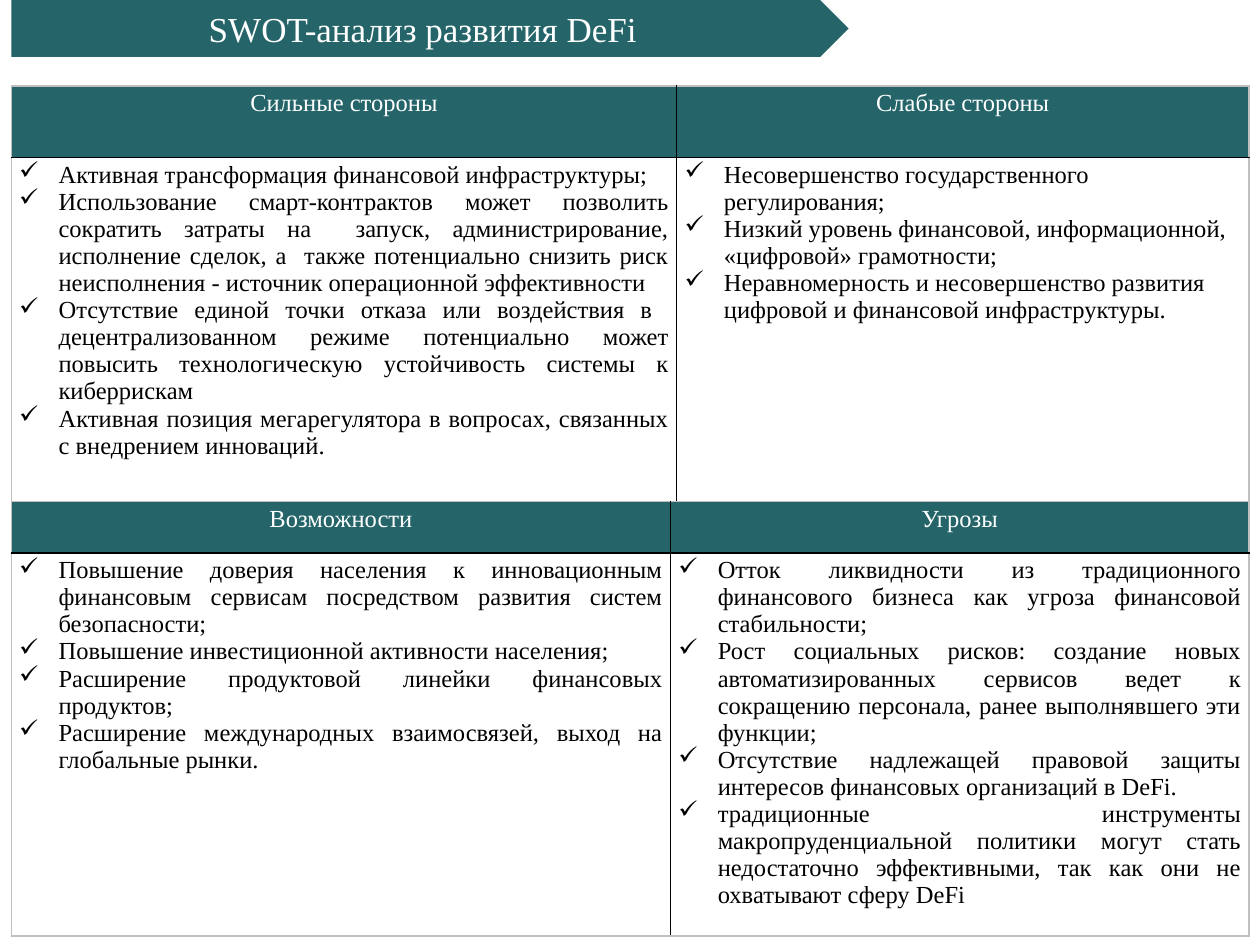
from lxml import etree
from pptx import Presentation
from pptx.dml.color import RGBColor
from pptx.enum.shapes import MSO_SHAPE
from pptx.enum.text import MSO_ANCHOR, PP_ALIGN
from pptx.oxml.ns import qn
from pptx.util import Pt

PENTAGON = MSO_SHAPE.PENTAGON
MIDDLE = MSO_ANCHOR.MIDDLE
LEFT, CENTER, JUSTIFY = PP_ALIGN.LEFT, PP_ALIGN.CENTER, PP_ALIGN.JUSTIFY

COLORS = {"teal": "256569", "white": "FFFFFF", "black": "000000", "edge": "BFBFBF"}
FONT = "Times New Roman"
MARGIN_LEFT = 6.5
INDENT = 22.5
CELL_MARGINS = {
    "margin_left": Pt(4.5), "margin_right": Pt(4.5),
    "margin_top": Pt(2.25), "margin_bottom": Pt(2.25),
}

STRENGTHS = [
    "Активная трансформация финансовой инфраструктуры;",
    "Использование смарт-контрактов может позволить сократить затраты на  запуск, "
    "администрирование, исполнение сделок, а  также потенциально снизить риск "
    "неисполнения - источник операционной эффективности",
    "Отсутствие единой точки отказа или воздействия в  децентрализованном режиме "
    "потенциально может повысить технологическую устойчивость системы к киберрискам",
    "Активная позиция мегарегулятора в вопросах, связанных с внедрением инноваций.",
]
WEAKNESSES = [
    "Несовершенство государственного регулирования;",
    "Низкий уровень финансовой, информационной, «цифровой» грамотности;",
    "Неравномерность и несовершенство развития цифровой и финансовой инфраструктуры.",
]
OPPORTUNITIES = [
    "Повышение доверия населения к инновационным финансовым сервисам посредством "
    "развития систем безопасности;",
    "Повышение инвестиционной активности населения;",
    "Расширение продуктовой линейки финансовых продуктов;",
    "Расширение международных взаимосвязей, выход на глобальные рынки.",
]
THREATS = [
    "Отток ликвидности из традиционного финансового бизнеса как угроза финансовой "
    "стабильности;",
    "Рост социальных рисков: создание новых автоматизированных сервисов ведет к "
    "сокращению персонала, ранее выполнявшего эти функции;",
    "Отсутствие надлежащей правовой защиты интересов финансовых организаций в DeFi.",
    "традиционные инструменты макропруденциальной политики могут стать недостаточно "
    "эффективными, так как они не охватывают сферу DeFi",
]


def rgb(name):
    return RGBColor.from_string(COLORS[name])


def write(p, text, size, color, align):
    p.alignment = align
    r = p.add_run()
    r.text = text
    for name, value in {"name": FONT, "size": Pt(size)}.items():
        setattr(r.font, name, value)
    r.font.color.rgb = rgb(color)


def add_check_mark(p):
    """Give the paragraph a hanging indent and a check mark bullet."""
    pPr = p._p.get_or_add_pPr()
    pPr.set("marL", str(Pt(INDENT)))
    pPr.set("indent", str(-Pt(INDENT)))
    etree.SubElement(pPr, qn("a:buChar")).set("char", "✓")


def set_borders(cell, row, col):
    """Draw black lines inside the two-by-two table and grey ones around it."""
    outer = {"L": col == 0, "R": col == 1, "T": row == 0, "B": row == 1}
    tcPr = cell._tc.get_or_add_tcPr()
    for i, (side, is_outer) in enumerate(outer.items()):
        ln = etree.Element(qn(f"a:ln{side}"), w=str(Pt(1)))
        fill = etree.SubElement(ln, qn("a:solidFill"))
        color = COLORS["edge" if is_outer else "black"]
        etree.SubElement(fill, qn("a:srgbClr")).set("val", color)
        tcPr.insert(i, ln)


def fill_header(cell, text):
    cell.fill.solid()
    cell.fill.fore_color.rgb = rgb("teal")
    write(cell.text_frame.paragraphs[0], text, 14, "white", CENTER)


def fill_list(cell, items, align):
    cell.fill.background()
    tf = cell.text_frame
    for i, item in enumerate(items):
        p = tf.add_paragraph() if i else tf.paragraphs[0]
        write(p, item, 14, "black", align)
        add_check_mark(p)


def add_swot_table(s, top, widths, heights, columns):
    """Add a header row over a row of lists; columns hold (title, items, align)."""
    table = s.shapes.add_table(
        2, 2, Pt(MARGIN_LEFT), Pt(top), Pt(sum(widths)), Pt(sum(heights))).table
    table.first_row = table.horz_banding = False
    for row, height in zip(table.rows, heights):
        row.height = Pt(height)
    for col, (title, items, align) in enumerate(columns):
        table.columns[col].width = Pt(widths[col])
        fill_header(table.cell(0, col), title)
        fill_list(table.cell(1, col), items, align)
        for row in range(2):
            cell = table.cell(row, col)
            for name, value in CELL_MARGINS.items():
                setattr(cell, name, value)
            set_borders(cell, row, col)


def add_title(s, text):
    sp = s.shapes.add_shape(PENTAGON, Pt(MARGIN_LEFT), Pt(0), Pt(478.5), Pt(32.5))
    sp.shadow.inherit = False
    sp.fill.solid()
    sp.fill.fore_color.rgb = rgb("teal")
    sp.line.fill.background()
    tf = sp.text_frame
    tf.word_wrap = True
    tf.vertical_anchor = MIDDLE
    write(tf.paragraphs[0], text, 20, "white", CENTER)


def main():
    prs = Presentation()
    prs.slide_width, prs.slide_height = Pt(720), Pt(540)
    s = prs.slides.add_slide(prs.slide_layouts[6])
    add_title(s, "SWOT-анализ развития DeFi")
    add_swot_table(s, 49, (380.2, 327), (41, 205), [
        ("Сильные стороны", STRENGTHS, JUSTIFY),
        ("Слабые стороны", WEAKNESSES, LEFT),
    ])
    add_swot_table(s, 286.5, (376.7, 330.5), (29.5, 219), [
        ("Возможности", OPPORTUNITIES, JUSTIFY),
        ("Угрозы", THREATS, JUSTIFY),
    ])
    prs.save("out.pptx")


if __name__ == "__main__":
    main()
